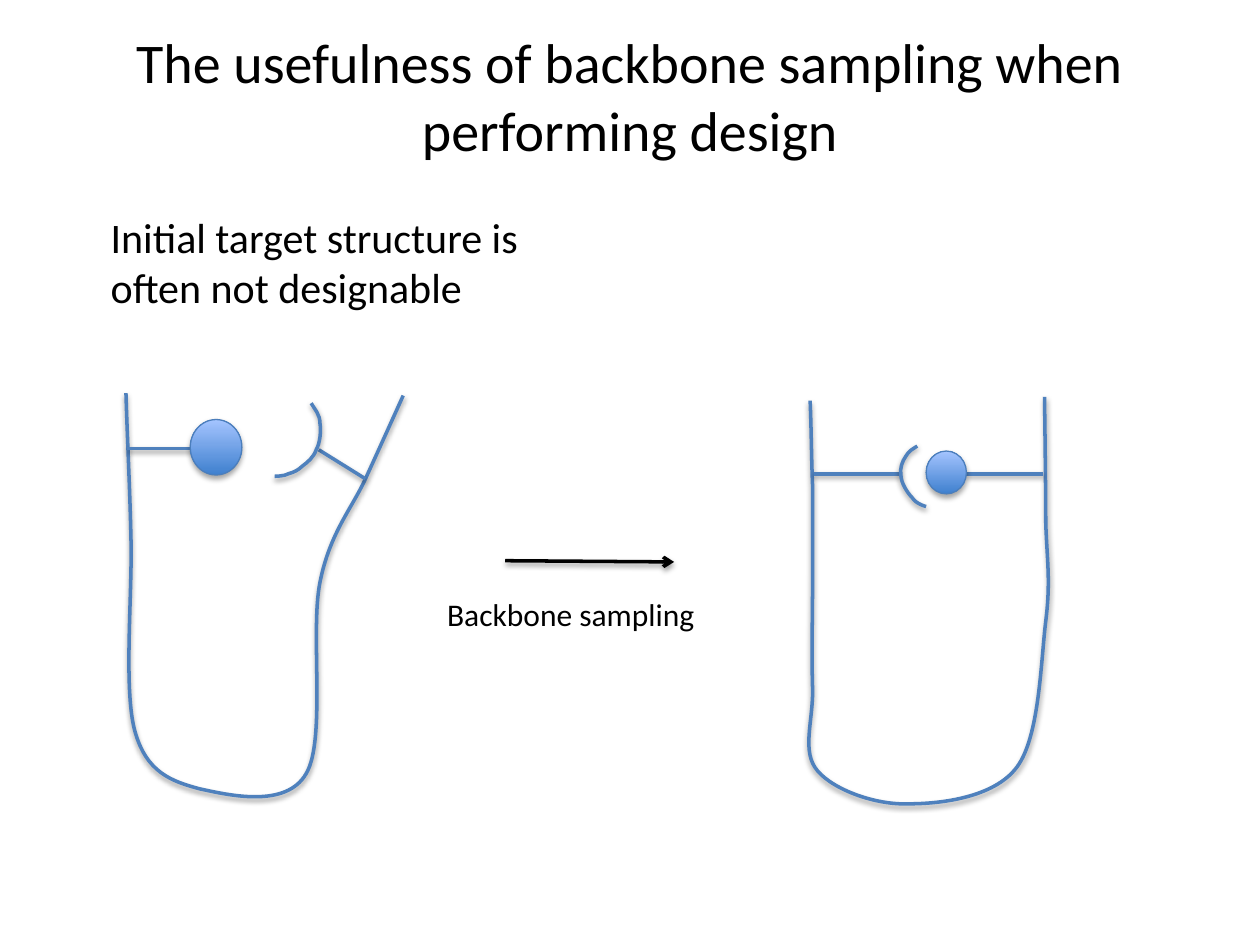
from dataclasses import dataclass
from lxml import etree
from pptx import Presentation, util as u
from pptx.dml.color import RGBColor
from pptx.enum import shapes, text
from pptx.oxml import ns


@dataclass(frozen=True)
class Theme:
    font: str = "Calibri"
    ink: str = "000000"
    blue: str = "4F81BD"
    rim: str = "4B7EBC"
    deep: str = "3F80CE"
    pale: str = "A4C4FF"
    head: int = 32
    body: int = 24
    note: int = 18
    thick: float = 2
    thin: float = 0.75


T = Theme()

OPEN = {
    "spine": [(0, 0.12), (0.01, 0.48), (0.03, 0.84), (0.04, 1.29),
              (0.05, 1.73), (-0.02, 2.47), (0.07, 2.8),
              (0.16, 3.13), (0.36, 3.2), (0.58, 3.26),
              (0.81, 3.31), (1.27, 3.42), (1.43, 3.14),
              (1.59, 2.87), (1.46, 2.01), (1.54, 1.62),
              (1.62, 1.22), (1.8, 1.03), (1.91, 0.78),
              (2.02, 0.54), (2.2, 0.14), (2.2, 0.14)],
    "arms": [((0.01, 0.56), (0.56, 0.56)), ((1.9, 0.8), (1.53, 0.57))],
    "ball": (0.51, 0.33, 0.41, 0.44),
    "cup": [(1.47, 0.2), (1.5, 0.25), (1.54, 0.29), (1.54, 0.36),
            (1.55, 0.42), (1.54, 0.52), (1.51, 0.57),
            (1.49, 0.63), (1.44, 0.67), (1.4, 0.7),
            (1.37, 0.73), (1.33, 0.75), (1.29, 0.76),
            (1.26, 0.78), (1.18, 0.78), (1.18, 0.78)],
}

SHUT = {
    "spine": [(0.43, 0.18), (0.44, 0.42), (0.44, 0.65), (0.45, 0.87),
              (0.45, 1.1), (0.45, 1.54), (0.45, 1.54),
              (0.45, 1.81), (0.44, 2.22), (0.45, 2.48),
              (0.45, 2.74), (0.36, 2.97), (0.49, 3.12),
              (0.62, 3.27), (0.95, 3.39), (1.21, 3.38),
              (1.47, 3.38), (1.89, 3.33), (2.07, 3.09),
              (2.25, 2.85), (2.26, 2.26), (2.3, 1.93),
              (2.34, 1.61), (2.31, 1.45), (2.3, 1.15),
              (2.3, 0.86), (2.29, 0.15), (2.29, 0.15)],
    "arms": [((0.46, 0.76), (1.15, 0.76)), ((2.28, 0.76), (1.67, 0.76))],
    "ball": (1.35, 0.58, 0.32, 0.34),
    "cup": [(1.28, 0.54), (1.25, 0.56), (1.21, 0.58), (1.19, 0.62),
            (1.16, 0.66), (1.14, 0.72), (1.15, 0.77),
            (1.15, 0.83), (1.2, 0.91), (1.24, 0.95),
            (1.27, 1), (1.35, 1.02), (1.35, 1.02)],
}


def style(item, form):
    for key, val in form.items():
        setattr(item, key, val)


def shade(shape, dist=1.6, alpha=38):
    root = shape._element.spPr
    old = root.find(ns.qn("a:effectLst"))
    if old is not None:
        root.remove(old)
    cast = etree.SubElement(etree.SubElement(root, ns.qn("a:effectLst")),
                            ns.qn("a:outerShdw"), blurRad=str(u.Pt(3.1)),
                            dist=str(u.Pt(dist)), dir="5400000", rotWithShape="0")
    tint = etree.SubElement(cast, ns.qn("a:srgbClr"), val=T.ink)
    etree.SubElement(tint, ns.qn("a:alpha"), val=str(alpha * 1000))


def stroke(shape, color, width):
    shape.line.color.rgb = RGBColor.from_string(color)
    shape.line.width = u.Pt(width)


def write(shape, words, size, form):
    frame = shape.text_frame
    frame.text = words
    style(frame, form)
    font = frame.paragraphs[0].runs[0].font
    style(font, {"name": T.font, "size": u.Pt(size)})
    font.color.rgb = RGBColor.from_string(T.ink)
    return frame.paragraphs[0]


def title(slide, box, words):
    shape = slide.shapes.title
    style(shape, dict(zip(("left", "top", "width", "height"), map(u.Inches, box))))
    para = write(shape, words, T.head, {"vertical_anchor": text.MSO_ANCHOR.MIDDLE,
                                        "word_wrap": True})
    para.alignment = text.PP_ALIGN.CENTER


def label(slide, box, words, size, wrap):
    shape = slide.shapes.add_textbox(*map(u.Inches, box))
    write(shape, words, size, {"word_wrap": wrap,
                               "auto_size": text.MSO_AUTO_SIZE.SHAPE_TO_FIT_TEXT})


def rule(slide, start, end, color):
    line = slide.shapes.add_connector(shapes.MSO_CONNECTOR.STRAIGHT,
                                      *map(u.Inches, start + end))
    stroke(line, color, T.thick)
    shade(line)
    return line


def bend(shape):
    legs = list(shape._element.iter(ns.qn("a:lnTo")))
    for i in range(0, len(legs), 3):
        arc = etree.Element(ns.qn("a:cubicBezTo"))
        legs[i].addprevious(arc)
        for leg in legs[i:i + 3]:
            arc.append(leg[0])
            leg.getparent().remove(leg)


def curve(slide, knots):
    dots = [(u.Inches(x), u.Inches(y)) for x, y in knots]
    pen = slide.shapes.build_freeform(*dots[0])
    pen.add_line_segments(dots[1:], close=False)
    shape = pen.convert_to_shape()
    bend(shape)
    shape.fill.background()
    stroke(shape, T.blue, T.thick)
    shade(shape)


def ball(slide, box):
    shape = slide.shapes.add_shape(shapes.MSO_SHAPE.OVAL, *map(u.Inches, box))
    shape.fill.gradient()
    shape.fill.gradient_angle = 90
    for stop, place, color in zip(shape.fill.gradient_stops, (0, 1), (T.deep, T.pale)):
        stop.position = place
        stop.color.rgb = RGBColor.from_string(color)
    stroke(shape, T.rim, T.thin)
    shade(shape, 1.8, 35)


def chain(slide, box, parts):
    left, top = box

    def move(points):
        return [(left + x, top + y) for x, y in points]

    curve(slide, move(parts["spine"]))
    for arm in parts["arms"]:
        rule(slide, *move(arm), T.blue)
    x, y, wide, high = parts["ball"]
    ball(slide, (left + x, top + y, wide, high))
    curve(slide, move(parts["cup"]))


def step(slide, box, words):
    left, top, wide, high = box
    line = rule(slide, (left + 0.56, top), (left + 1.9, top + 0.01), T.ink)
    edge = line._element.spPr.find(ns.qn("a:ln"))
    etree.SubElement(edge, ns.qn("a:tailEnd"), type="arrow")
    label(slide, (left, top + 0.22, wide, high - 0.22), words, T.note, False)


def main():
    deck = Presentation()
    style(deck, {"slide_width": u.Inches(10), "slide_height": u.Inches(7.5)})
    slide = deck.slides.add_slide(deck.slide_layouts[5])
    title(slide, (0.5, 0.13, 9, 1.25),
          "The usefulness of backbone sampling when performing design")
    chain(slide, (1, 3), OPEN)
    label(slide, (0.78, 1.63, 3.5, 0.91),
          "Initial target structure is often not designable", T.body, True)
    step(slide, (3.45, 4.45, 2.18, 0.62), "Backbone sampling")
    chain(slide, (6, 3), SHUT)
    deck.save("out.pptx")


if __name__ == "__main__":
    main()
